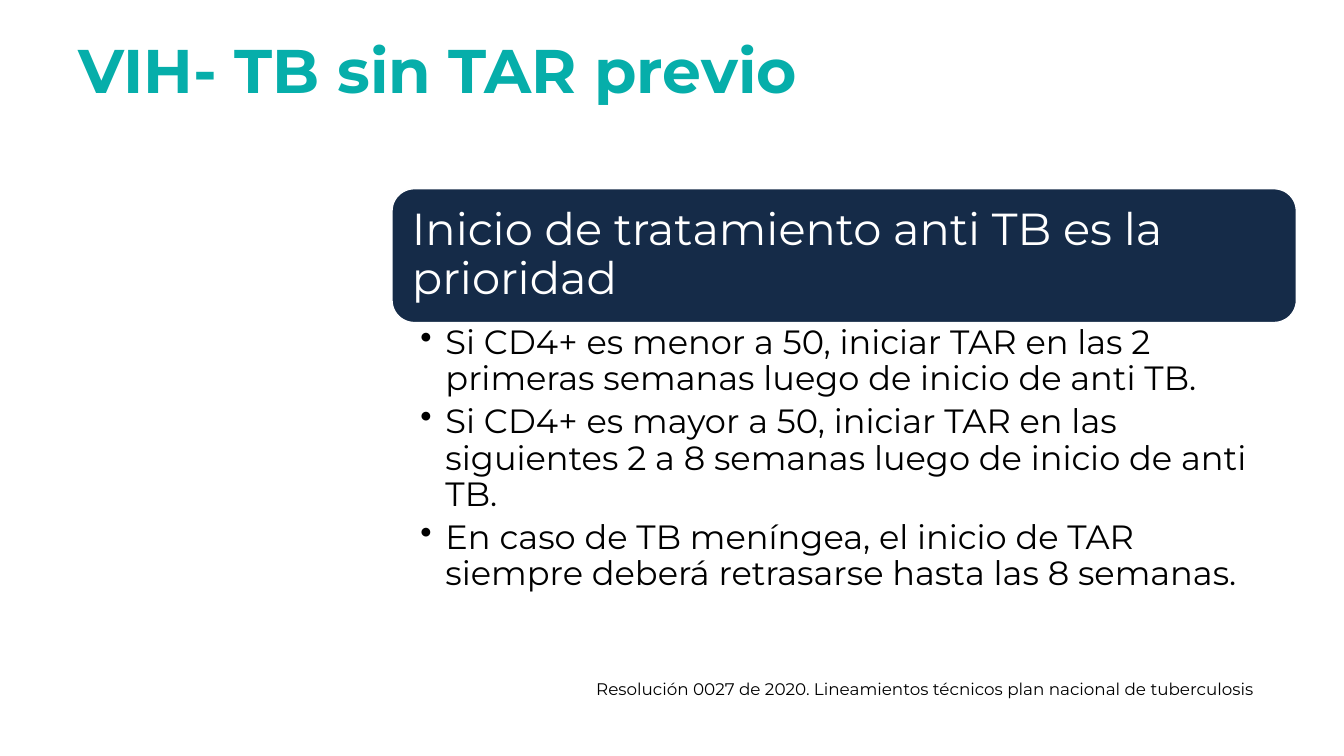
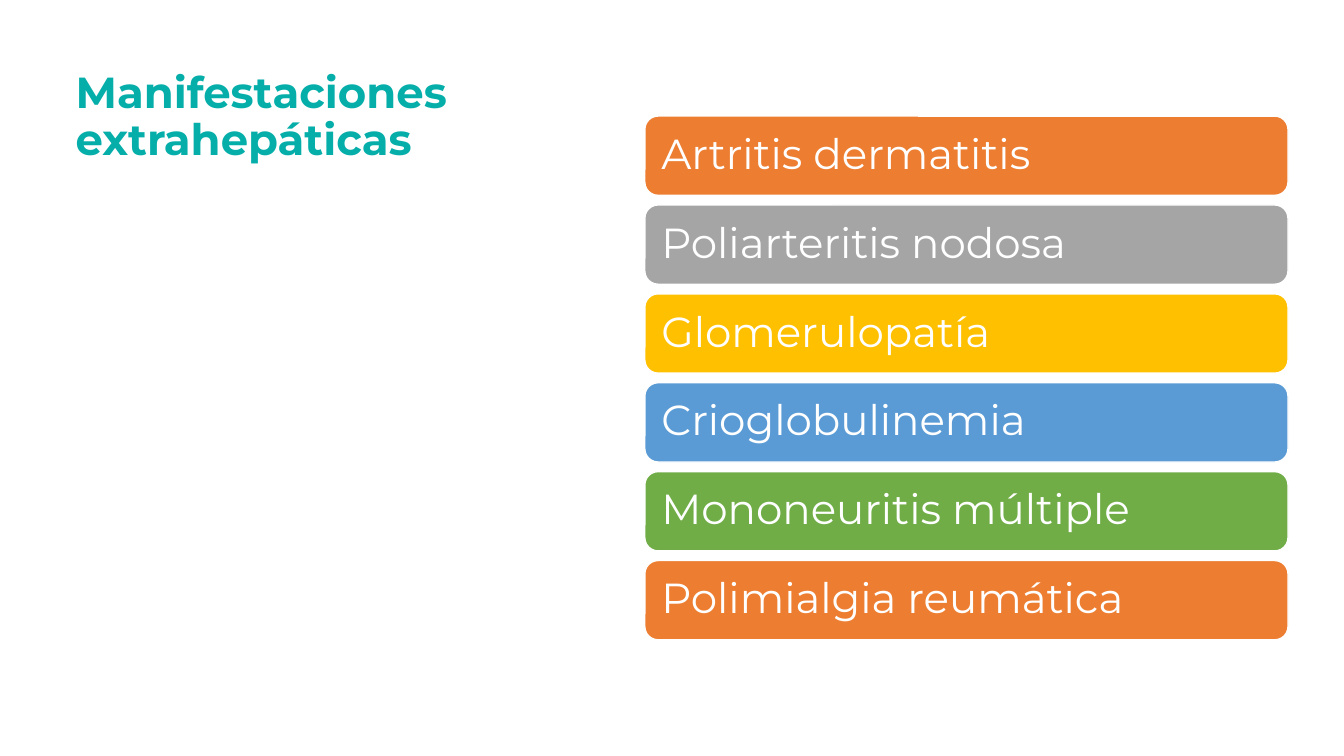
from lxml.etree import SubElement
from pptx import Presentation
from pptx.dml.color import RGBColor
from pptx.enum.shapes import MSO_SHAPE as Shape
from pptx.enum.text import MSO_ANCHOR as Anchor, PP_ALIGN as Align
from pptx.oxml.ns import qn
from pptx.util import Pt

TEAL = RGBColor(0x06, 0xAE, 0xAA)
NAVY = RGBColor(0x15, 0x2B, 0x48)
ORANGE = RGBColor(0xED, 0x7D, 0x31)
GRAY = RGBColor(0xA5, 0xA5, 0xA5)
YELLOW = RGBColor(0xFF, 0xC0, 0x00)
BLUE = RGBColor(0x5B, 0x9B, 0xD5)
GREEN = RGBColor(0x70, 0xAD, 0x47)
WHITE = RGBColor(0xFF, 0xFF, 0xFF)
BLACK = RGBColor(0x00, 0x00, 0x00)

FONT = "Montserrat"
BULLET_INDENT = Pt(18)
BAR_TOP, BAR_HEIGHT, BAR_PITCH = 82.9, 56.6, 63.5


class Deck:
    def __init__(self):
        self.deck = Presentation()
        self.deck.slide_width = Pt(960)
        self.deck.slide_height = Pt(540)
        self.page = None

    def new_page(self):
        self.page = self.deck.slides.add_slide(self.deck.slide_layouts[6])

    def set_text(self, para, text, size, color, bold=False, align=Align.LEFT, spacing=0.9):
        para.text = text
        para.alignment = align
        para.line_spacing = spacing
        para.font.name = FONT
        para.font.size = Pt(size)
        para.font.bold = bold
        para.font.color.rgb = color

    def frame(self, left, top, width, height):
        """Add a wrapping text box and return its text frame."""
        box = self.page.shapes.add_textbox(Pt(left), Pt(top), Pt(width), Pt(height))
        box.text_frame.word_wrap = True
        return box.text_frame

    def title(self, text, left, top, width, height, size):
        frame = self.frame(left, top, width, height)
        frame.vertical_anchor = Anchor.MIDDLE
        self.set_text(frame.paragraphs[0], text, size, TEAL, bold=True)

    def bar(self, text, left, top, width, height, fill, size, inset):
        """Add a rounded bar with white text."""
        bar = self.page.shapes.add_shape(
            Shape.ROUNDED_RECTANGLE, Pt(left), Pt(top), Pt(width), Pt(height))
        bar.shadow.inherit = False
        bar.fill.solid()
        bar.fill.fore_color.rgb = fill
        bar.line.color.rgb = WHITE
        bar.line.width = Pt(1)
        frame = bar.text_frame
        frame.word_wrap = True
        frame.vertical_anchor = Anchor.MIDDLE
        frame.margin_left = frame.margin_right = Pt(inset)
        frame.margin_top = frame.margin_bottom = Pt(inset)
        self.set_text(frame.paragraphs[0], text, size, WHITE)

    def bullets(self, items, left, top, width, height, size):
        frame = self.frame(left, top, width, height)
        frame.margin_left, frame.margin_right = Pt(20.2), Pt(13.7)
        frame.margin_top = frame.margin_bottom = Pt(2.2)
        for index, item in enumerate(items):
            para = frame.add_paragraph() if index else frame.paragraphs[0]
            properties = para._p.get_or_add_pPr()
            properties.set("marL", str(BULLET_INDENT))
            properties.set("indent", str(-BULLET_INDENT))
            SubElement(properties, qn("a:buChar")).set("char", "•")
            self.set_text(para, item, size, BLACK)
            para.space_after = Pt(size * 0.2)

    def source(self, text):
        frame = self.frame(227.5, 481, 675.4, 21.6)
        self.set_text(frame.paragraphs[0], text, 12, BLACK, align=Align.RIGHT, spacing=1.0)


def treatment_page(deck):
    deck.new_page()
    deck.title("VIH- TB sin TAR previo", 49, 0, 828, 104.4, 44)
    deck.bar("Inicio de tratamiento anti TB es la prioridad",
             280, 134.8, 646, 95.6, NAVY, 32, 9.6)
    deck.bullets([
        "Si CD4+ es menor a 50, iniciar TAR en las 2 primeras semanas "
        "luego de inicio de anti TB.",
        "Si CD4+ es mayor a 50, iniciar TAR en las siguientes 2 a 8 semanas "
        "luego de inicio de anti TB.",
        "En caso de TB meníngea, el inicio de TAR siempre deberá retrasarse "
        "hasta las 8 semanas.",
    ], 280, 230.4, 646, 175, 24)
    deck.source("Resolución 0027 de 2020. Lineamientos técnicos plan nacional de tuberculosis")


def manifestations_page(deck):
    deck.new_page()
    deck.title("Manifestaciones extrahepáticas", 47, 30, 334.8, 108, 31)
    manifestations = [
        ("Artritis dermatitis", ORANGE),
        ("Poliarteritis nodosa", GRAY),
        ("Glomerulopatía", YELLOW),
        ("Crioglobulinemia", BLUE),
        ("Mononeuritis múltiple", GREEN),
        ("Polimialgia reumática", ORANGE),
    ]
    for row, (name, color) in enumerate(manifestations):
        deck.bar(name, 460.6, BAR_TOP + row * BAR_PITCH, 459.4, BAR_HEIGHT, color, 30, 9)


def main():
    deck = Deck()
    treatment_page(deck)
    manifestations_page(deck)
    deck.deck.save("out.pptx")


if __name__ == "__main__":
    main()
